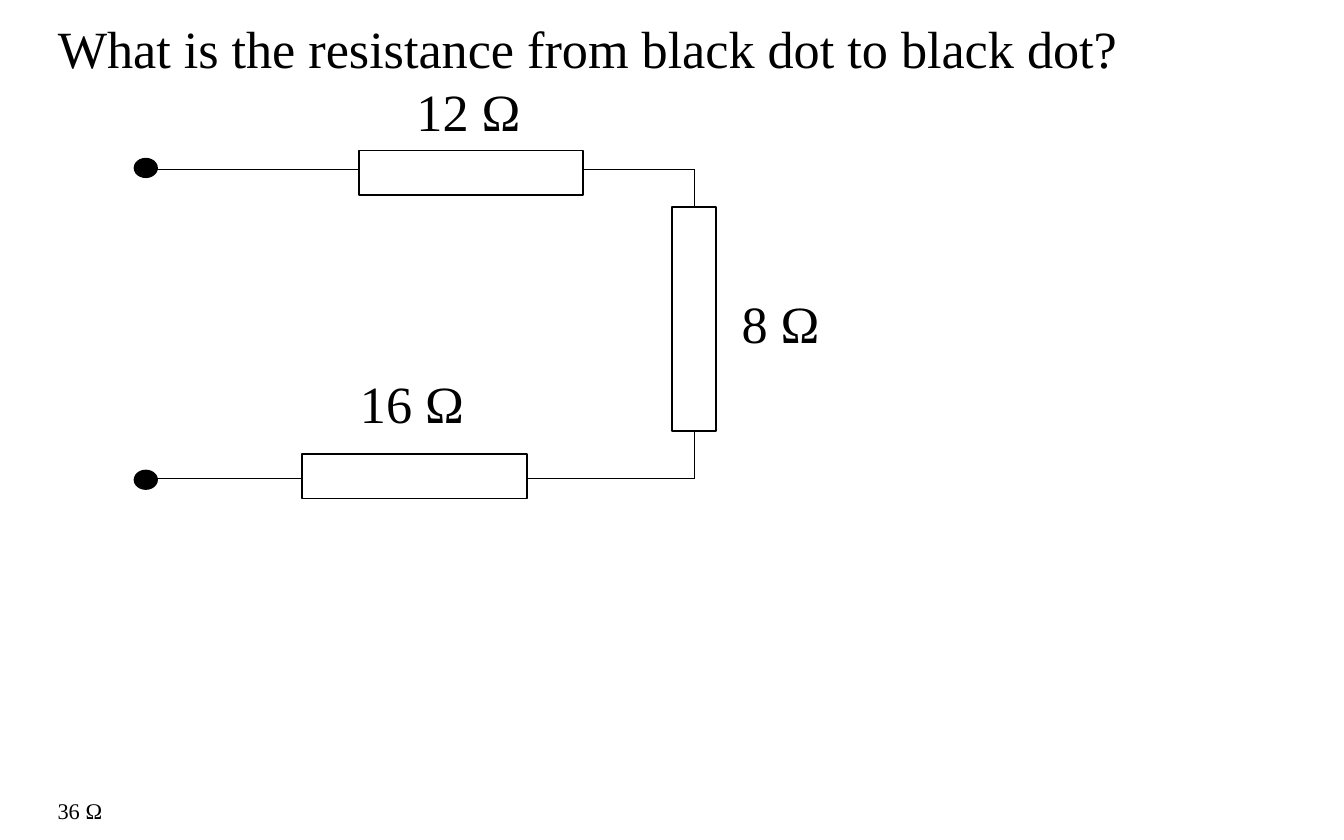
"""Build a slide asking for the total resistance of a series circuit."""
from lxml import etree
from pptx import Presentation
from pptx.dml.color import RGBColor
from pptx.enum import shapes, text
from pptx.oxml import ns
from pptx.util import Inches, Pt

BLACK = RGBColor(0x00, 0x00, 0x00)
WHITE = RGBColor(0xFF, 0xFF, 0xFF)
FONT = "Times New Roman"
DOT_LEFT, WIRE_LEFT, WIRE_RIGHT = 1, 1.08, 5.17
TOP_WIRE, BOTTOM_WIRE = 1.26, 3.56


def write_text(shape, content, size=28, wrap=False):
    frame = shape.text_frame
    frame.text = content
    frame.word_wrap = wrap
    frame.auto_size = text.MSO_AUTO_SIZE.SHAPE_TO_FIT_TEXT
    frame.vertical_anchor = text.MSO_ANCHOR.TOP
    paragraph = frame.paragraphs[0]
    paragraph.alignment = text.PP_ALIGN.LEFT
    paragraph.line_spacing = 1.0
    paragraph.space_before = Pt(0)
    font = paragraph.runs[0].font
    font.name, font.size = FONT, Pt(size)
    font.color.rgb = BLACK


def add_title(slide, content, left, top, width, height):
    title = slide.shapes.title
    title.left, title.top = Inches(left), Inches(top)
    title.width, title.height = Inches(width), Inches(height)
    write_text(title, content, wrap=True)


def add_label(slide, content, left, top, width, height=0.57, **text_format):
    box = slide.shapes.add_textbox(
        Inches(left), Inches(top), Inches(width), Inches(height))
    write_text(box, content, **text_format)


def add_wire(slide, start, end):
    wire = slide.shapes.add_connector(
        shapes.MSO_CONNECTOR.STRAIGHT, *map(Inches, (*start, *end)))
    wire.line.color.rgb = BLACK
    wire.line.width = Pt(0.75)
    etree.SubElement(wire._element.spPr, ns.qn("a:effectLst"))


def add_component(slide, kind, left, top, width, height, fill, line_width):
    shape = slide.shapes.add_shape(
        kind, Inches(left), Inches(top), Inches(width), Inches(height))
    shape.shadow.inherit = False
    shape.fill.solid()
    shape.fill.fore_color.rgb = fill
    shape.line.color.rgb = BLACK
    shape.line.width = Pt(line_width)
    return shape


def add_terminal(slide, top):
    add_component(slide, shapes.MSO_SHAPE.OVAL, DOT_LEFT, top, 0.17, 0.14,
                  BLACK, 0.75)


def add_resistor(slide, left, top, rotation=0):
    resistor = add_component(slide, shapes.MSO_SHAPE.RECTANGLE, left, top,
                             1.67, 0.33, WHITE, 1)
    resistor.rotation = rotation


def main():
    presentation = Presentation()
    presentation.slide_width = Inches(10)
    presentation.slide_height = Inches(6.25)
    slide = presentation.slides.add_slide(presentation.slide_layouts[5])

    add_title(slide, "What is the resistance from black dot to black dot?",
              0.33, 0.07, 9.33, 0.57)
    add_label(slide, "36 Ω", 0.33, 5.88, 0.58, 0.3, size=12)

    for wire_y, inner_y in ((TOP_WIRE, 2.1), (BOTTOM_WIRE, 2.58)):
        add_wire(slide, (WIRE_LEFT, wire_y), (WIRE_RIGHT, wire_y))
        add_wire(slide, (WIRE_RIGHT, inner_y), (WIRE_RIGHT, wire_y))
    for top in (1.18, 3.5):
        add_terminal(slide, top)
    for left, top, rotation in (
            (2.67, 1.12, 0), (2.25, 3.38, 0), (4.33, 2.21, 90)):
        add_resistor(slide, left, top, rotation)
    for content, left, top, width in (
            ("8 Ω", 5.42, 2.12, 0.8),
            ("12 Ω", 3, 0.54, 0.99),
            ("16 Ω", 2.58, 2.71, 0.99)):
        add_label(slide, content, left, top, width)

    presentation.save("out.pptx")


if __name__ == "__main__":
    main()
